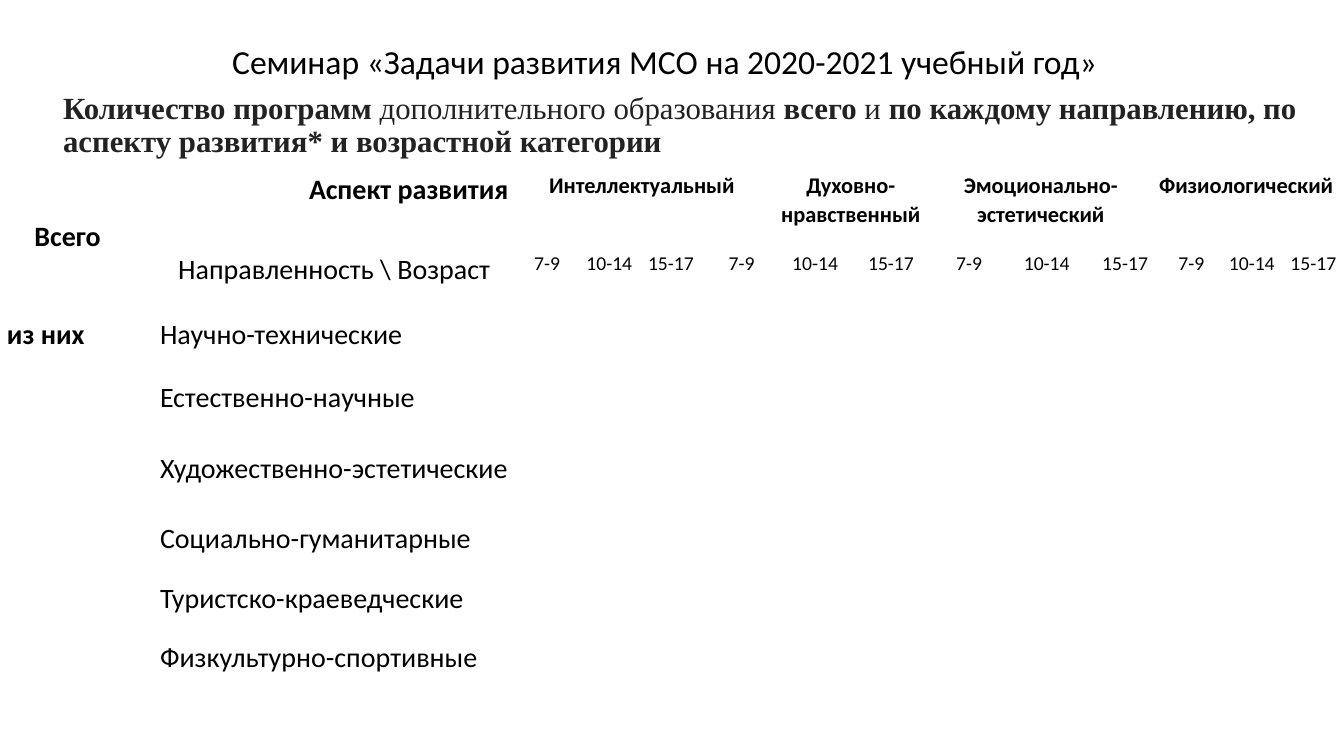
from lxml import etree
from pptx import Presentation
from pptx import util as u
from pptx.dml.color import RGBColor
from pptx.enum import text
from pptx.oxml.ns import qn

COLORS = {"ink": "000000", "heading": "222222", "line": "FFFFFF"}
CENTER, LEFT = text.PP_ALIGN.CENTER, text.PP_ALIGN.LEFT
RIGHT, JUSTIFY = text.PP_ALIGN.RIGHT, text.PP_ALIGN.JUSTIFY
TOP, MIDDLE = text.MSO_ANCHOR.TOP, text.MSO_ANCHOR.MIDDLE

COLUMN_WIDTHS = [96.5, 12.5, 259, 45, 44, 44, 47.5, 9.5, 48,
                 60.5, 51, 60, 42.5, 9.5, 42.5, 44, 44]
ROW_HEIGHTS = [57.5, 36.5, 46, 44, 57.5, 43, 42.5, 42]
# Each aspect: name, first column, last column
ASPECTS = [
    ("Интеллектуальный", 3, 6),
    ("Духовно-нравственный", 7, 9),
    ("Эмоционально-эстетический", 10, 12),
    ("Физиологический", 13, 16),
]
AGES = ["7-9", "10-14", "15-17"]
AGE_COLUMNS = [3, 4, 5, 6, 8, 9, 10, 11, 12, 14, 15, 16]
WIDE_AGE_COLUMNS = [6, 12]
DIRECTIONS = [
    "Научно-технические",
    "Естественно-научные",
    "Художественно-эстетические",
    "Социально-гуманитарные",
    "Туристско-краеведческие",
    "Физкультурно-спортивные",
]


def write(frame, content, size=20, bold=False, font="Calibri", color="ink",
          align=LEFT, spacing=1.07, before=0, after=8):
    """Fill a frame; content is a string or a list of (string, bold) runs."""
    paragraph = frame.paragraphs[0]
    paragraph.alignment = align
    paragraph.line_spacing = spacing
    paragraph.space_before = u.Pt(before)
    paragraph.space_after = u.Pt(after)
    runs = [(content, bold)] if isinstance(content, str) else content
    for words, is_bold in runs:
        run = paragraph.add_run()
        run.text = words
        run.font.name = font
        run.font.size = u.Pt(size)
        run.font.bold = is_bold
        run.font.color.rgb = RGBColor.from_string(COLORS[color])


class SlideBuilder:
    def __init__(self, slide):
        self.slide = slide

    def text_box(self, left, top, width, height, content, **style):
        box = self.slide.shapes.add_textbox(
            u.Pt(left), u.Pt(top), u.Pt(width), u.Pt(height))
        box.text_frame.word_wrap = True
        write(box.text_frame, content, spacing=0.9, before=10, after=0, **style)

    def table(self, left, top, widths, heights):
        frame = self.slide.shapes.add_table(
            len(heights), len(widths), u.Pt(left), u.Pt(top),
            u.Pt(sum(widths)), u.Pt(sum(heights)))
        table = frame.table
        table.first_row = table.horz_banding = False
        for column, width in zip(table.columns, widths):
            column.width = u.Pt(width)
        for index, (row, height) in enumerate(zip(table.rows, heights)):
            row.height = u.Pt(height)
            for cell in row.cells:
                self.plain_cell(cell, bottom=3 if index == 0 else 1)
        return table

    def plain_cell(self, cell, bottom):
        cell.margin_left = cell.margin_right = u.Pt(5)
        cell.margin_top = cell.margin_bottom = 0
        properties = cell._tc.get_or_add_tcPr()
        for side, width in (("L", 1), ("R", 1), ("T", 1), ("B", bottom)):
            line = etree.SubElement(properties, qn(f"a:ln{side}"), w=str(u.Pt(width)))
            fill = etree.SubElement(line, qn("a:solidFill"))
            etree.SubElement(fill, qn("a:srgbClr"), val=COLORS["line"])
        cell.fill.background()

    def cell_text(self, cell, content, anchor=TOP, **style):
        cell.vertical_anchor = anchor
        write(cell.text_frame, content, **style)


def main():
    presentation = Presentation()
    presentation.slide_width, presentation.slide_height = u.Pt(960), u.Pt(540)
    slide = presentation.slides.add_slide(presentation.slide_layouts[6])
    builder = SlideBuilder(slide)

    # Headings
    builder.text_box(38, 62.5, 895, 60, [
        ("Количество программ", True),
        (" дополнительного образования ", False),
        ("всего", True),
        (" и ", False),
        ("по каждому направлению, по аспекту развития* и возрастной категории", True),
    ], size=22, font="Times New Roman", color="heading", align=JUSTIFY)
    builder.text_box(38, 29, 879, 34,
                     "Семинар «Задачи развития МСО на 2020-2021 учебный год» ",
                     size=24, align=CENTER)

    # Table grid and merged cells
    table = builder.table(0, 121.5, COLUMN_WIDTHS, ROW_HEIGHTS)
    for column in (0, 1):
        table.cell(0, column).merge(table.cell(1, column))
    for row in range(1, len(ROW_HEIGHTS)):
        for column in WIDE_AGE_COLUMNS:
            table.cell(row, column).merge(table.cell(row, column + 1))

    # Table header
    builder.cell_text(table.cell(0, 0), "Всего", MIDDLE, bold=True, align=CENTER)
    builder.cell_text(table.cell(0, 2), "Аспект развития", bold=True, align=RIGHT)
    builder.cell_text(table.cell(1, 2), "Направленность \\ Возраст", align=CENTER)
    for name, first, last in ASPECTS:
        table.cell(0, first).merge(table.cell(0, last))
        builder.cell_text(table.cell(0, first), name, size=16, bold=True, align=CENTER)
    for column, age in zip(AGE_COLUMNS, AGES * len(ASPECTS)):
        builder.cell_text(table.cell(1, column), age, size=14, align=CENTER)

    # Row labels
    builder.cell_text(table.cell(2, 0), "из них", MIDDLE, bold=True)
    for row, direction in enumerate(DIRECTIONS, start=2):
        builder.cell_text(table.cell(row, 2), direction, MIDDLE)

    presentation.save("out.pptx")


if __name__ == "__main__":
    main()
